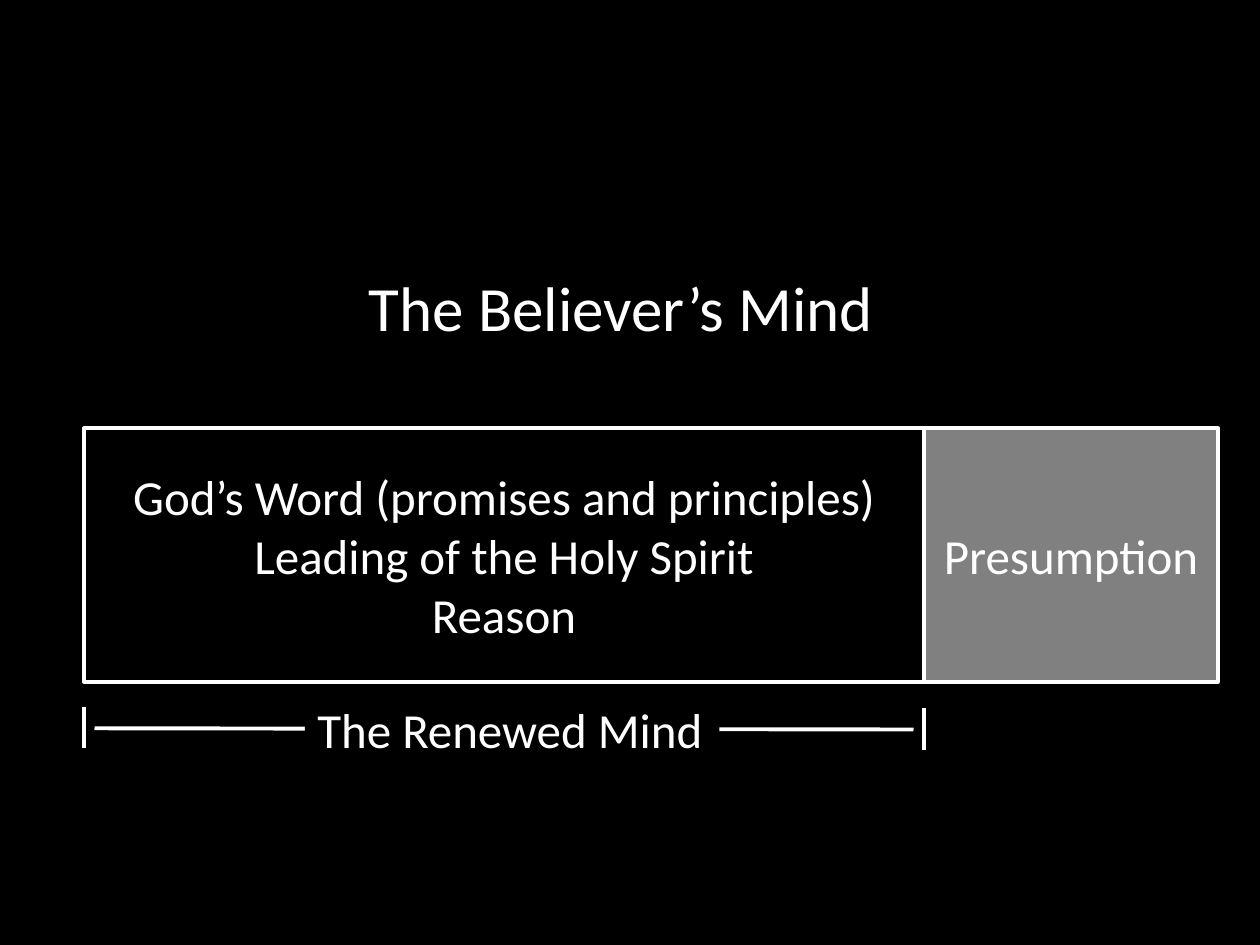
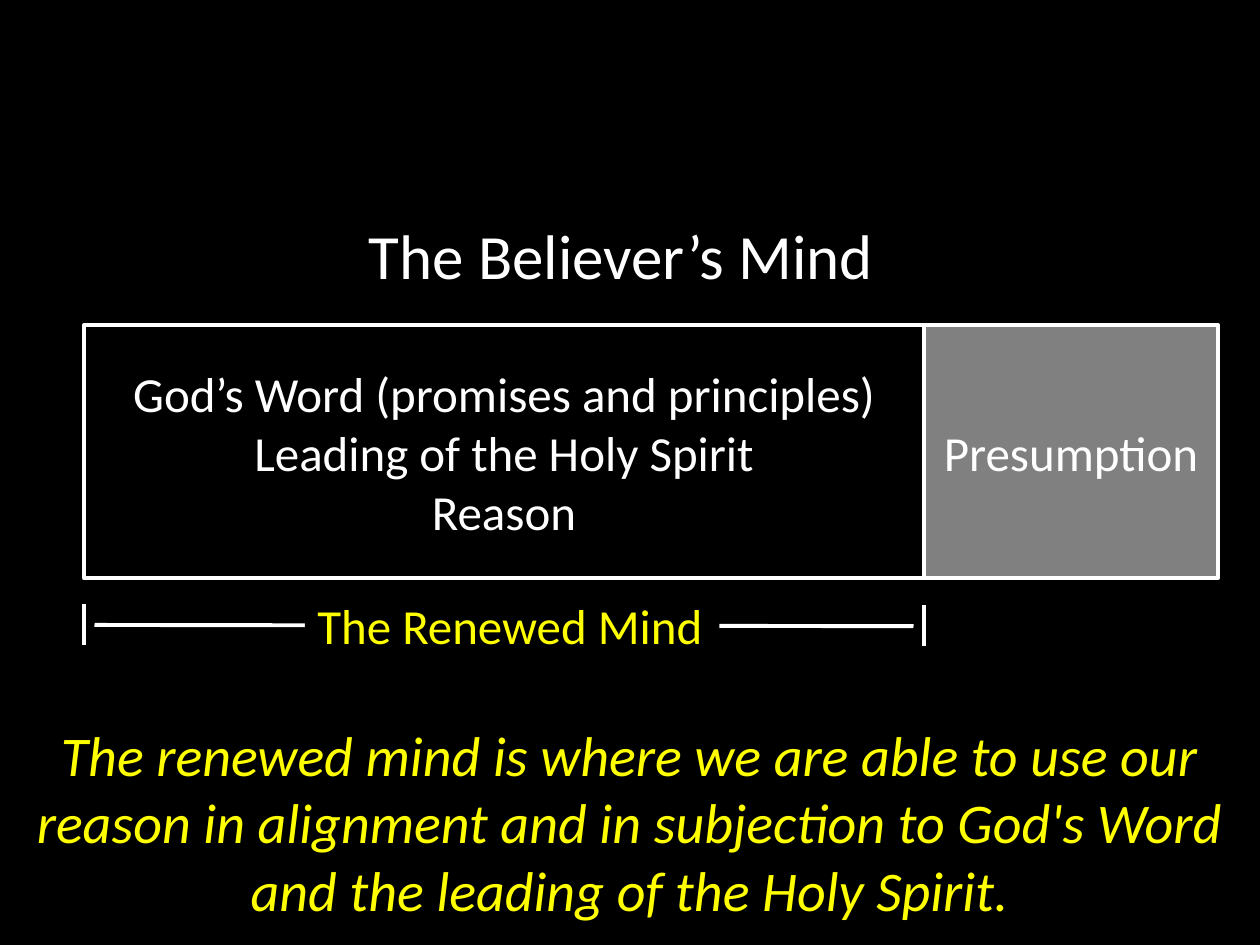
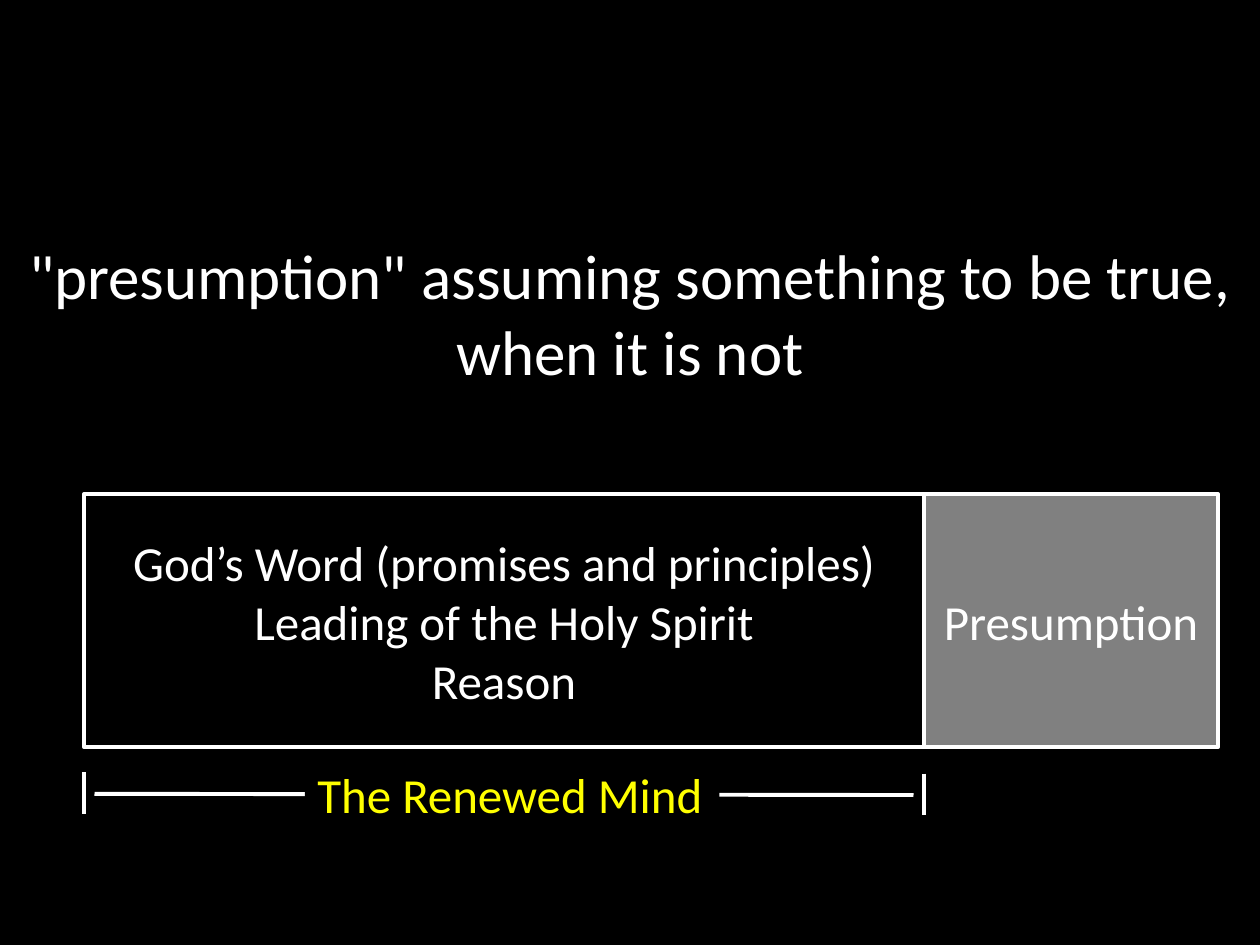
from lxml import etree
from pptx import Presentation, util as u
from pptx.dml.color import RGBColor
from pptx.enum import shapes, text
from pptx.oxml.ns import qn

# Content
FONT = "Calibri"
COLORS = {"black": "000000", "white": "FFFFFF", "gray": "808080", "yellow": "FFFF00"}
RENEWED = ["God’s Word (promises and principles)", "Leading of the Holy Spirit", "Reason"]
PRESUMPTION = ["Presumption"]
SPAN_LABEL = ["The Renewed Mind"]
HEADING = "The Believer’s Mind"
SUMMARY = ("The renewed mind is where we are able to use our reason in alignment "
           "and in subjection to God's Word and the leading of the Holy Spirit.")
DEFINITION = '"presumption" assuming something to be true, when it is not'

SLIDES = [
    {"bar_top": 3.4, "label": "white", "heading_top": 2.08},
    {"bar_top": 2.58, "label": "yellow", "heading_top": 1.67,
     "banner": (SUMMARY, 5.67, 1.72, 32, "yellow", True)},
    {"bar_top": 3.92, "label": "yellow",
     "banner": (DEFINITION, 1.83, 1.31, 36, "white", False)},
]

# Grid: 30 columns across the slide
WIDTH, HEIGHT = 10, 7.5
COL = WIDTH / 30
LEFT, SPLIT, RIGHT = 2 * COL, 22 * COL, 29 * COL
BAR_H = 2.01
TICK_H = 0.33
LINE_PT = 2.25


def rgb(name):
    return RGBColor.from_string(COLORS[name])


def write(sp, lines, size, color="white", align=text.PP_ALIGN.CENTER,
          anchor=text.MSO_ANCHOR.TOP, wrap=True, italic=None):
    tf = sp.text_frame
    tf.word_wrap = wrap
    tf.vertical_anchor = anchor
    tf.text = "\n".join(lines)
    for p in tf.paragraphs:
        p.alignment = align
        p.font.name, p.font.size, p.font.italic = FONT, u.Pt(size), italic
        p.font.color.rgb = rgb(color)


def add_text(s, at, lines, size, **style):
    write(s.shapes.add_textbox(*map(u.Inches, at)), lines, size, **style)


def add_box(s, at, lines, fill=None, outlined=True, **style):
    sp = s.shapes.add_shape(shapes.MSO_SHAPE.RECTANGLE, *map(u.Inches, at))
    sp.shadow.inherit = False
    if fill:
        sp.fill.solid()
        sp.fill.fore_color.rgb = rgb(fill)
    else:
        sp.fill.background()
    if outlined:
        sp.line.color.rgb = rgb("white")
        sp.line.width = u.Pt(LINE_PT)
    else:
        sp.line.fill.background()
    write(sp, lines, 28, **style)


def add_line(s, *ends):
    line = s.shapes.add_connector(shapes.MSO_CONNECTOR.STRAIGHT, *map(u.Inches, ends))
    line.line.color.rgb = rgb("white")
    line.line.width = u.Pt(LINE_PT)
    etree.SubElement(line._element.spPr, qn("a:effectLst"))


def add_mind_bar(s, top, label_color):
    # Two parts of the mind
    middle = text.MSO_ANCHOR.MIDDLE
    add_box(s, (LEFT, top, SPLIT - LEFT, BAR_H), RENEWED, anchor=middle)
    add_box(s, (SPLIT, top, RIGHT - SPLIT, BAR_H), PRESUMPTION, "gray", anchor=middle)
    # Span marker below the renewed part
    for x, drop in ((LEFT, 2.21), (SPLIT, 2.22)):
        add_line(s, x, top + drop, x, top + drop + TICK_H)
    add_line(s, LEFT + COL / 4, top + 2.38, SPLIT - COL / 4, top + 2.39)
    add_box(s, (2.42, top + 2.1, 3.29, 0.57), SPAN_LABEL, "black", outlined=False,
            color=label_color, align=text.PP_ALIGN.LEFT, wrap=False)


def main():
    prs = Presentation()
    prs.slide_width, prs.slide_height = u.Inches(WIDTH), u.Inches(HEIGHT)
    for content in SLIDES:
        s = prs.slides.add_slide(prs.slide_layouts[6])
        s.background.fill.solid()
        s.background.fill.fore_color.rgb = rgb("black")
        add_mind_bar(s, content["bar_top"], content["label"])
        if "heading_top" in content:
            add_text(s, (2.83, content["heading_top"], 4.24, 0.71), [HEADING], 36,
                     align=text.PP_ALIGN.LEFT, wrap=False)
        if "banner" in content:
            words, top, height, size, color, italic = content["banner"]
            add_text(s, (0, top, WIDTH, height), [words], size, color=color, italic=italic)
    prs.save("out.pptx")


if __name__ == "__main__":
    main()
